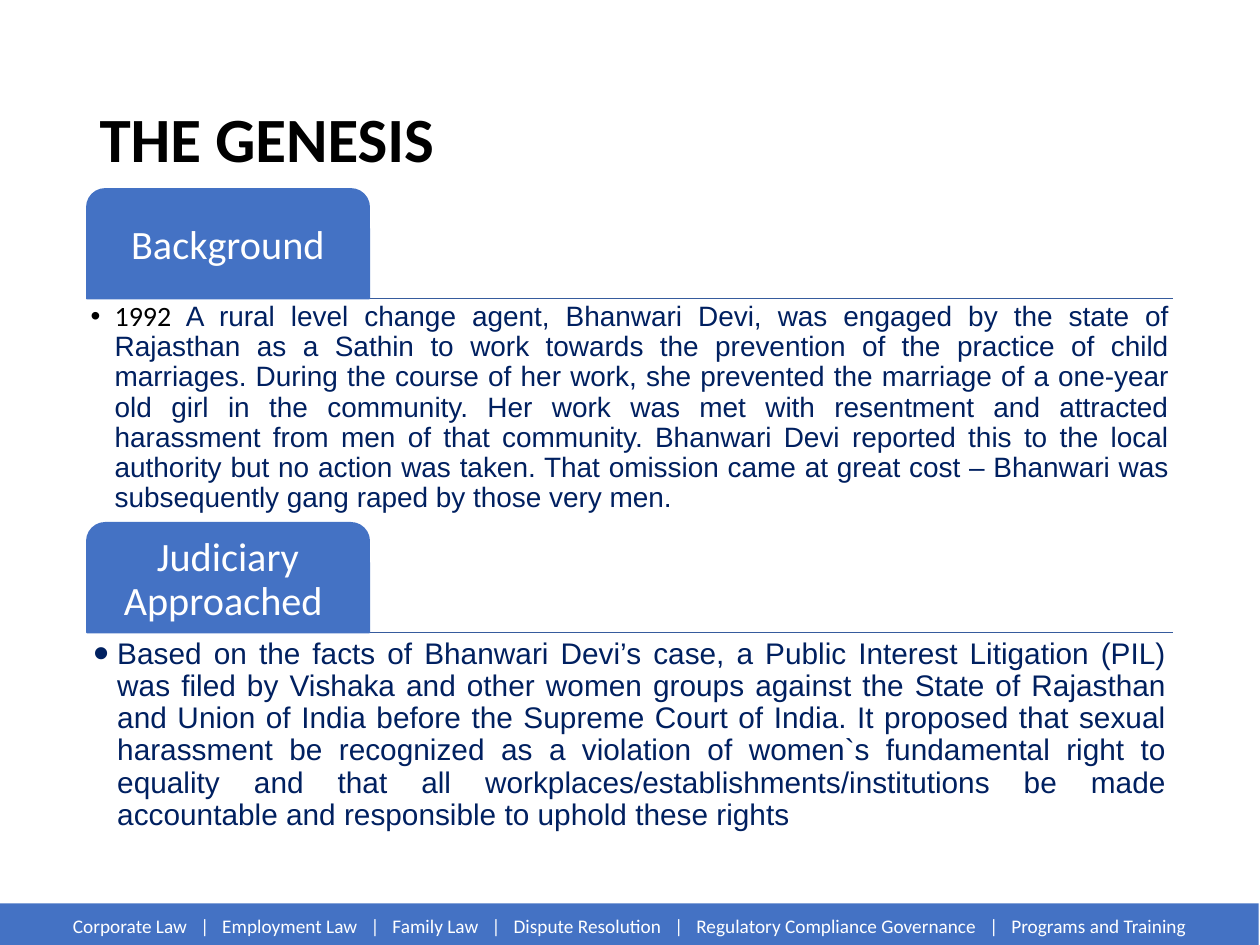
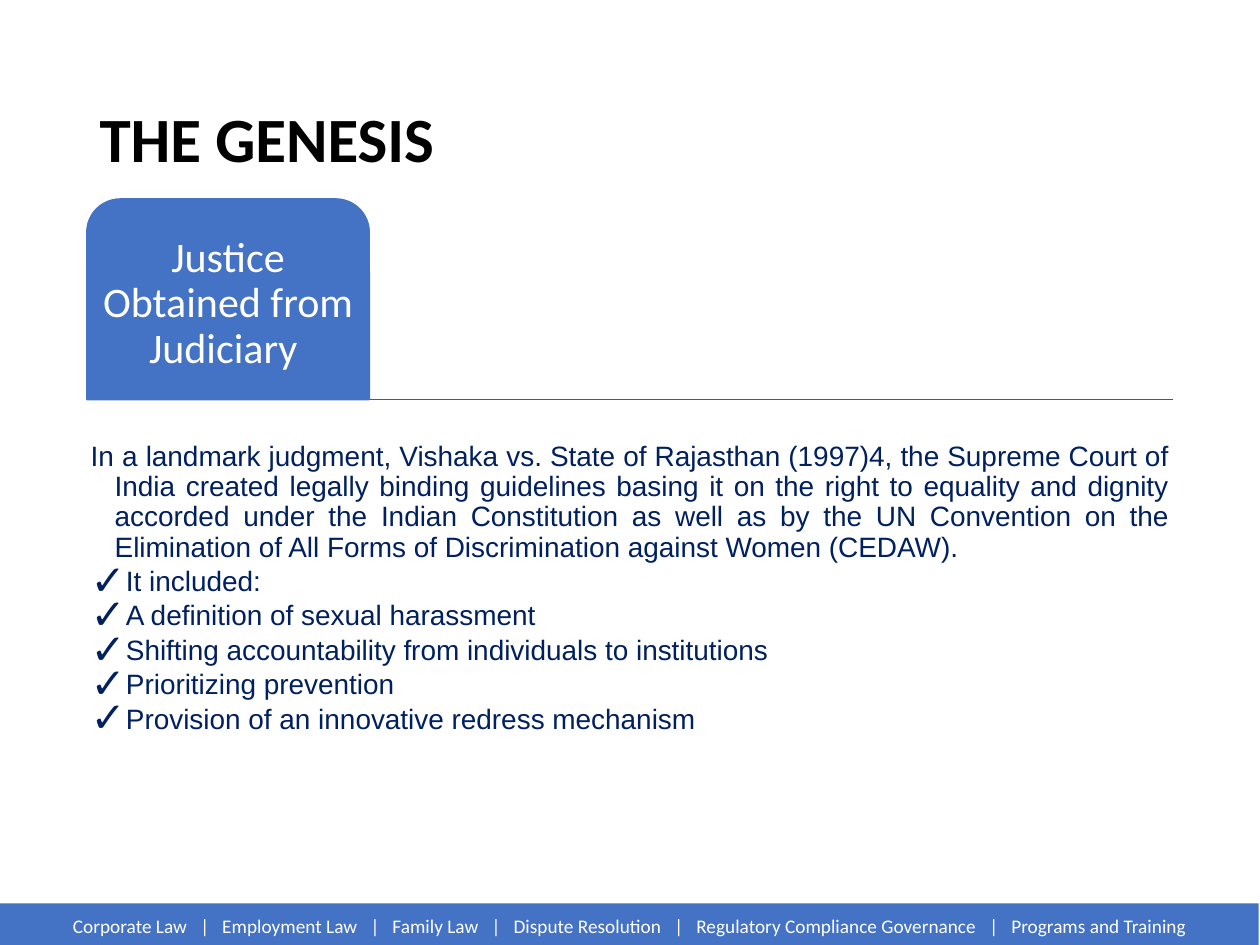
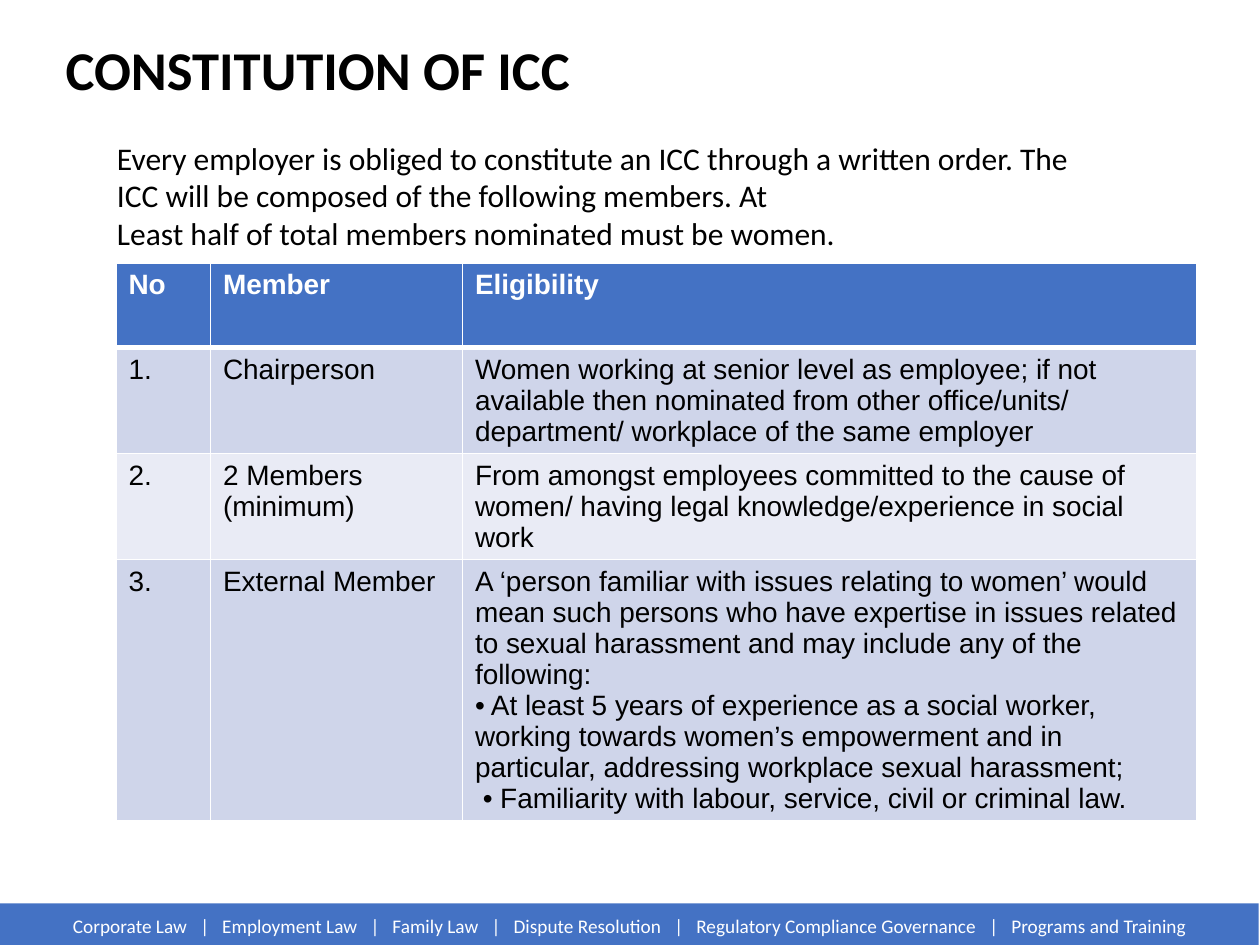
from dataclasses import dataclass

from lxml import etree
from pptx import Presentation
from pptx.dml.color import RGBColor
from pptx.enum.shapes import MSO_CONNECTOR, MSO_SHAPE
from pptx.enum.text import MSO_ANCHOR, MSO_AUTO_SIZE, PP_ALIGN
from pptx.oxml.ns import qn
from pptx.util import Inches, Pt

LEFT, MID, JUST = PP_ALIGN.LEFT, PP_ALIGN.CENTER, PP_ALIGN.JUSTIFY
TOP, CENTER = MSO_ANCHOR.TOP, MSO_ANCHOR.MIDDLE
FIXED = MSO_AUTO_SIZE.NONE
RECT, TAB = MSO_SHAPE.RECTANGLE, MSO_SHAPE.ROUND_2_SAME_RECTANGLE
STRAIGHT = MSO_CONNECTOR.STRAIGHT
PAIR, SINGLE, PLAIN = 3, 1, 5  # layouts: two lists, one list, title only


@dataclass(frozen=True)
class Theme:
    blue: str = "4472C4"
    rule: str = "365B9D"
    navy: str = "002060"
    black: str = "000000"
    white: str = "FFFFFF"
    bands: tuple = ("CFD5EA", "E9EBF5")
    head: str = "Calibri"
    body: str = "Arial"
    title: float = 36
    small_title: float = 31.2
    label: float = 23
    big_label: float = 24
    intro: float = 18
    large: float = 17
    text: float = 16
    foot: float = 11
    line: float = 0.9


T = Theme()
AREAS = ("Corporate Law", "Employment Law", "Family Law", "Dispute Resolution",
         "Regulatory Compliance Governance", "Programs and Training")
TITLE_BOX = (0.69, 0.4, 8.62, 1.45)
SIDE, WIDE, TAB_WIDE = 0.69, 8.62, 2.24

STORY = (
    "A rural level change agent, Bhanwari Devi, was engaged by the state of "
    "Rajasthan as a Sathin to work towards the prevention of the practice of child "
    "marriages. During the course of her work, she prevented the marriage of a "
    "one-year old girl in the community. Her work was met with resentment and "
    "attracted harassment from men of that community. Bhanwari Devi reported this "
    "to the local authority but no action was taken. That omission came at great "
    "cost – Bhanwari was subsequently gang raped by those very men.")
CASE = (
    "Based on the facts of Bhanwari Devi’s case, a Public Interest Litigation "
    "(PIL) was filed by Vishaka and other women groups against the State of "
    "Rajasthan and Union of India before the Supreme Court of India. It proposed "
    "that sexual harassment be recognized as a violation of women`s fundamental "
    "right to equality and that all workplaces/establishments/institutions be made "
    "accountable and responsible to uphold these rights")
RULING = (
    "In a landmark judgment, Vishaka vs. State of Rajasthan (1997)4, the Supreme "
    "Court of India created legally binding guidelines basing it on the right to "
    "equality and dignity accorded under the Indian Constitution as well as by the "
    "UN Convention on the Elimination of All Forms of Discrimination against Women "
    "(CEDAW).")
POINTS = ("It included:", "A definition of sexual harassment",
          "Shifting accountability from individuals to institutions",
          "Prioritizing prevention", "Provision of an innovative redress mechanism")
INTRO = (
    "Every employer is obliged to constitute an ICC through a written order. The "
    "ICC will be composed of the following members. At",
    "Least half of total members nominated must be women.")
ROWS = (
    ("No", "Member", "Eligibility"),
    ("1.", "Chairperson",
     "Women working at senior level as employee; if not available then nominated "
     "from other office/units/ department/ workplace of the same employer"),
    ("2.", "2 Members (minimum)",
     "From amongst employees committed to the cause of women/ having legal "
     "knowledge/experience in social work"),
    ("3.", "External Member",
     ("A ‘person familiar with issues relating to women’ would mean such persons "
      "who have expertise in issues related to sexual harassment and may include "
      "any of the following:",
      "• At least 5 years of experience as a social worker, working towards "
      "women’s empowerment and in particular, addressing workplace sexual "
      "harassment;",
      " • Familiarity with labour, service, civil or criminal law.")),
)


def rgb(code):
    return RGBColor.from_string(code)


def place(shape, box):
    shape.left, shape.top, shape.width, shape.height = map(Inches, box)


# Text
def mark(para, sign, scale, hang):
    """Set the hanging indent and the bullet, or no bullet, of a paragraph."""
    props = para._p.get_or_add_pPr()
    props.set("marL", str(Inches(hang)))
    props.set("indent", str(-Inches(hang)))
    if not sign:
        etree.SubElement(props, qn("a:buNone"))
        return
    etree.SubElement(props, qn("a:buSzPct")).set("val", str(scale * 1000))
    etree.SubElement(props, qn("a:buFont")).set("typeface", T.body)
    etree.SubElement(props, qn("a:buChar")).set("char", sign)


def style(run, face, size, color, bold=False, gap=0):
    font = run.font
    font.name, font.size, font.bold = face, Pt(size), bold
    font.color.rgb = rgb(color)
    if gap:
        run._r.get_or_add_rPr().set("spc", str(gap * 100))


def write(para, text, align=LEFT, line=None, after=0, sign=None, scale=100,
          hang=None, **font):
    """Fill one paragraph; text is a string or a list of (string, font changes)."""
    if hang is not None:
        mark(para, sign, scale, hang)
    para.alignment = align
    para.space_before, para.space_after = Pt(0), Pt(after)
    if line:
        para.line_spacing = line
    for part, extra in [(text, {})] if isinstance(text, str) else text:
        run = para.add_run()
        run.text = part
        style(run, **{**font, **extra})


def fill(frame, items, anchor=TOP, pad=None, **form):
    """Fill a frame; each item is a text or a (text, format changes) pair."""
    frame.word_wrap, frame.auto_size = True, FIXED
    frame.vertical_anchor = anchor
    if pad is not None:
        frame.margin_left = frame.margin_right = Inches(pad)
        frame.margin_top = frame.margin_bottom = Inches(pad)
    for pos, item in enumerate(items):
        text, extra = (item, {}) if isinstance(item, str) else item
        para = frame.add_paragraph() if pos else frame.paragraphs[0]
        write(para, text, **{**form, **extra})


# Shared parts
def block(slide, kind, box, line=None):
    shape = slide.shapes.add_shape(kind, *map(Inches, box))
    shape.shadow.inherit = False
    shape.fill.solid()
    shape.fill.fore_color.rgb = rgb(T.blue)
    if line:
        shape.line.color.rgb = rgb(line)
        shape.line.width = Pt(1)
    else:
        shape.line.fill.background()
    return shape


def footer(slide):
    gap = (" ", {"gap": 5})
    parts = [(AREAS[0], {})]
    for area in AREAS[1:]:
        parts += [gap, ("|", {}), gap, (area, {})]
    band = block(slide, RECT, (0, 7.17, 9.99, 0.36))
    fill(band.text_frame, [(parts, {})], anchor=CENTER, align=MID,
         face=T.head, size=T.foot, color=T.white)


def start(deck, layout, title, box=TITLE_BOX, size=T.title, line=T.line, pad=None):
    slide = deck.slides.add_slide(deck.slide_layouts[layout])
    place(slide.shapes.title, box)
    fill(slide.shapes.title.text_frame, [title], anchor=CENTER, pad=pad,
         line=line, face=T.head, size=size, color=T.black, bold=True)
    footer(slide)
    return slide


def topic(slide, label, top, high, size):
    """Draw a tab with a rule along its foot."""
    foot = top + high
    rule = slide.shapes.add_connector(
        STRAIGHT, *map(Inches, (SIDE, foot, SIDE + WIDE, foot)))
    rule.line.color.rgb = rgb(T.rule)
    rule.line.width = Pt(1)
    etree.SubElement(rule._element.spPr, qn("a:effectLst"))
    tab = block(slide, TAB, (SIDE, top, TAB_WIDE, high), T.blue)
    fill(tab.text_frame, [label], anchor=CENTER, pad=0.04, align=MID,
         line=T.line, face=T.head, size=size, color=T.white)


def prose(holder, items, top, high, size, pad, **form):
    place(holder, (SIDE, top, WIDE, high))
    fill(holder.text_frame, items, pad=pad, line=T.line, after=2.4, hang=0.19,
         face=T.body, size=size, color=T.navy, **form)


# Table
def edge(cell, width):
    """Draw a white border along the bottom of a cell."""
    line = etree.Element(qn("a:lnB"))
    line.set("w", str(Pt(width)))
    paint = etree.SubElement(line, qn("a:solidFill"))
    etree.SubElement(paint, qn("a:srgbClr")).set("val", T.white)
    cell._tc.get_or_add_tcPr().insert(0, line)


def grid(slide, left, top, cols, highs):
    frame = slide.shapes.add_table(
        len(highs), len(cols), *map(Inches, (left, top, sum(cols), sum(highs))))
    table = frame.table
    for col, wide in zip(table.columns, cols):
        col.width = Inches(wide)
    for pos, (row, high, texts) in enumerate(zip(table.rows, highs, ROWS)):
        row.height = Inches(high)
        head = pos == 0
        for cell, text in zip(row.cells, texts):
            cell.fill.solid()
            cell.fill.fore_color.rgb = rgb(T.blue if head else T.bands[(pos - 1) % 2])
            edge(cell, 3 if head else 1)
            fill(cell.text_frame, [text] if isinstance(text, str) else text,
                 face=T.body, size=T.text, bold=head,
                 color=T.white if head else T.black)


# Slides
def genesis(deck):
    slide = start(deck, PAIR, "THE GENESIS")
    first, second = slide.placeholders[1], slide.placeholders[2]
    high, deep = 0.87, 1.73
    tops = (1.5, 4.15)
    for label, top in zip(("Background", "Judiciary Approached "), tops):
        topic(slide, label, top, high, T.label)
    year = ("1992 ", {"face": T.head, "color": T.black})
    prose(first, [([year, (STORY, {})], {})], tops[0] + high, deep, T.text, 0.03,
          align=JUST, sign="•")
    prose(second, [CASE], tops[1] + high, deep, T.large, 0.05,
          align=JUST, sign="•", scale=150)


def justice(deck):
    slide = start(deck, SINGLE, "THE GENESIS")
    topic(slide, "Justice Obtained from Judiciary ", 1.58, 1.59, T.big_label)
    checks = [(point, {"sign": "✓", "scale": 150}) for point in POINTS]
    prose(slide.placeholders[1], [(RULING, {"align": JUST}), *checks],
          3.48, 2.86, T.text, 0.03)


def members(deck):
    slide = start(deck, PLAIN, "CONSTITUTION OF ICC", (0.5, 0.04, 9, 0.94),
                  T.small_title, Pt(43), 0.02)
    grid(slide, 0.92, 2.09, (0.75, 2, 5.83), (0.67, 0.84, 0.84, 2.06))
    intro = slide.shapes.add_textbox(*map(Inches, (0.83, 1.05, 8.08, 1.01)))
    fill(intro.text_frame, INTRO, face=T.head, size=T.intro, color=T.black)


def main():
    deck = Presentation()
    deck.slide_width, deck.slide_height = Inches(10), Inches(7.5)
    for build in (genesis, justice, members):
        build(deck)
    deck.save("out.pptx")


if __name__ == "__main__":
    main()
